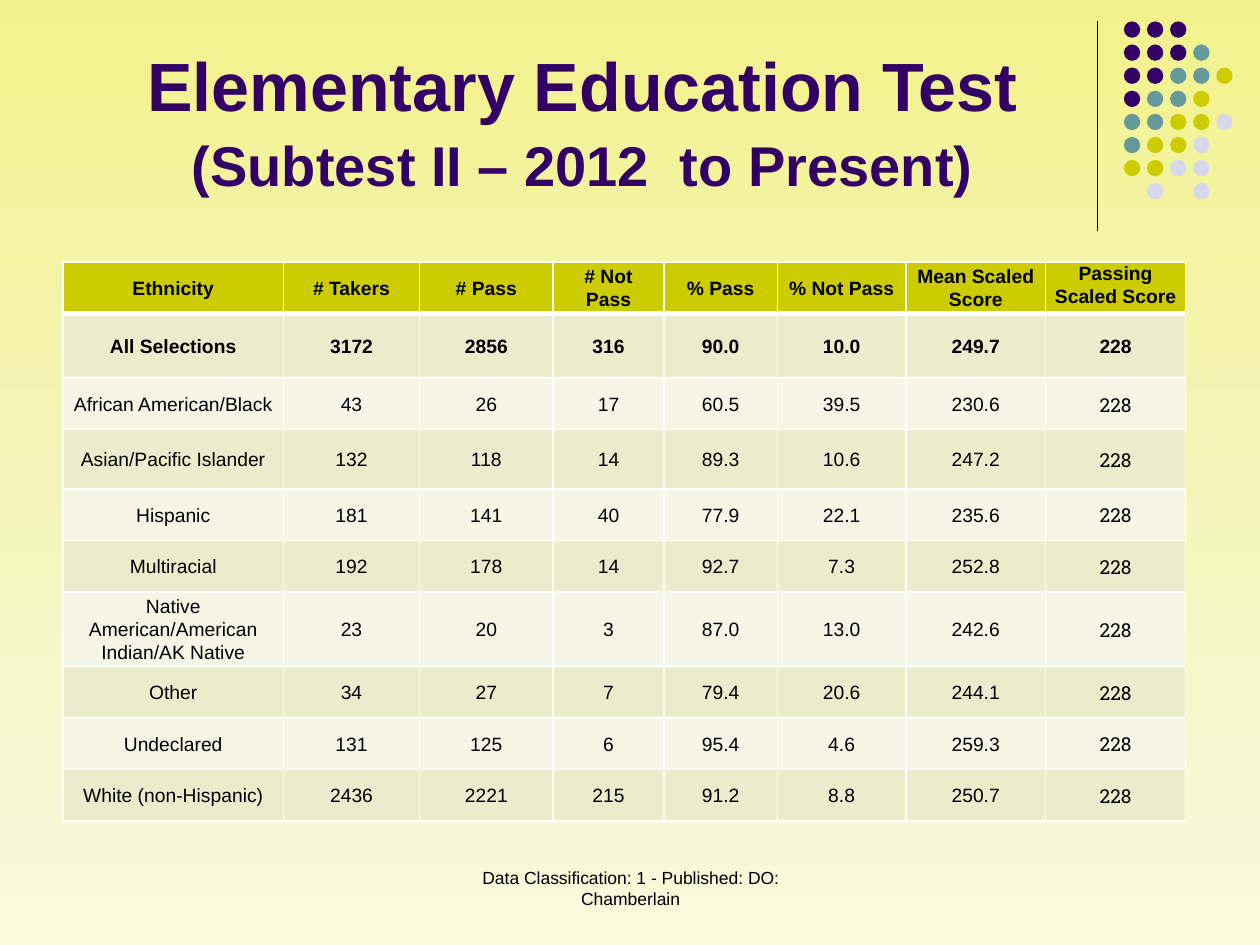
from copy import deepcopy

from pptx import Presentation
from pptx.dml.color import RGBColor
from pptx.enum.shapes import MSO_CONNECTOR as Connector, MSO_SHAPE as Shape
from pptx.enum.text import MSO_ANCHOR as Anchor, PP_ALIGN as Align
from pptx.oxml import parse_xml
from pptx.oxml.ns import nsdecls, qn
from pptx.util import Inches, Pt

BLACK = RGBColor(0x00, 0x00, 0x00)
PURPLE = RGBColor(0x33, 0x00, 0x66)
TEAL = RGBColor(0x66, 0x99, 0x99)
LIME = RGBColor(0xCC, 0xCC, 0x00)
LAVENDER = RGBColor(0xD8, 0xD8, 0xEC)
BAND_DARK = RGBColor(0xEC, 0xEC, 0xCC)
BAND_LIGHT = RGBColor(0xF6, 0xF6, 0xE7)
BORDER = RGBColor(0xFF, 0xFF, 0xFF)
SKY_TOP = RGBColor(0xF2, 0xF2, 0x8C)
SKY_MIDDLE = RGBColor(0xF5, 0xF5, 0xBA)
SKY_BOTTOM = RGBColor(0xF9, 0xF9, 0xDE)

BODY_FONT = "Arial"
SCORE_FONT = "Roboto Slab"

DOT_COLORS = {"P": PURPLE, "T": TEAL, "L": LIME, "V": LAVENDER}
DOT_ROWS = ["PPP", "PPPT", "PPTTL", "PTTL", "TTLLV", "TLLV", "LLVV", " V V"]

COLUMN_WIDTHS = [1.75, 1.08, 1.06, 0.88, 0.9, 1.02, 1.11, 1.11]
ROW_HEIGHTS = [0.41, 0.51, 0.41, 0.47, 0.41, 0.41, 0.54, 0.41, 0.41, 0.41]
HEADINGS = ["Ethnicity", "# Takers", "# Pass", "# Not Pass", "% Pass",
            "% Not Pass", "Mean Scaled Score", "Passing Scaled Score"]
PASSING_SCORE = "228"
RESULTS = [
    ["All Selections", "3172", "2856", "316", "90.0", "10.0", "249.7"],
    ["African American/Black", "43", "26", "17", "60.5", "39.5", "230.6"],
    ["Asian/Pacific Islander", "132", "118", "14", "89.3", "10.6", "247.2"],
    ["Hispanic", "181", "141", "40", "77.9", "22.1", "235.6"],
    ["Multiracial", "192", "178", "14", "92.7", "7.3", "252.8"],
    ["Native American/American Indian/AK Native",
     "23", "20", "3", "87.0", "13.0", "242.6"],
    ["Other", "34", "27", "7", "79.4", "20.6", "244.1"],
    ["Undeclared", "131", "125", "6", "95.4", "4.6", "259.3"],
    ["White (non-Hispanic)", "2436", "2221", "215", "91.2", "8.8", "250.7"],
]


def add_run(paragraph, text, size, color=BLACK, bold=False, font=BODY_FONT):
    run = paragraph.add_run()
    run.text = text
    run.font.name = font
    run.font.size = Pt(size)
    run.font.bold = bold
    run.font.color.rgb = color


def paint_background(slide):
    fill = slide.background.fill
    fill.gradient()
    fill.gradient_angle = 270
    # Third stop halfway down
    stop_list = next(slide.element.iter(qn("a:gsLst")))
    middle = deepcopy(stop_list[0])
    middle.set("pos", "50000")
    stop_list.insert(1, middle)
    for stop, color in zip(fill.gradient_stops, (SKY_TOP, SKY_MIDDLE, SKY_BOTTOM)):
        stop.color.rgb = color


def add_dot_corner(slide, left, top, rule_height):
    # Vertical rule
    rule = slide.shapes.add_connector(
        Connector.STRAIGHT, Inches(left), Inches(top),
        Inches(left), Inches(top + rule_height))
    rule.line.color.rgb = BLACK
    rule.line.width = Pt(0.75)
    rule._element.spPr.append(parse_xml(f"<a:effectLst {nsdecls('a')}/>"))

    # Dot grid
    diameter, pitch, gap = 0.13, 0.1833, 0.21
    dots = slide.shapes.add_group_shape()
    for row, pattern in enumerate(DOT_ROWS):
        for column, key in enumerate(pattern):
            if key == " ":
                continue
            dot = dots.shapes.add_shape(
                Shape.OVAL, Inches(left + gap + column * pitch),
                Inches(top + row * pitch), Inches(diameter), Inches(diameter))
            dot.shadow.inherit = False
            dot.fill.solid()
            dot.fill.fore_color.rgb = DOT_COLORS[key]
            dot.line.fill.background()


def add_centered_box(slide, left, top, width, height, anchor):
    box = slide.shapes.add_textbox(
        Inches(left), Inches(top), Inches(width), Inches(height))
    frame = box.text_frame
    frame.word_wrap = True
    frame.vertical_anchor = anchor
    paragraph = frame.paragraphs[0]
    paragraph.alignment = Align.CENTER
    return paragraph


def add_title(slide, left, top, width, height):
    title = add_centered_box(slide, left, top, width, height, Anchor.BOTTOM)
    title.line_spacing = 1.08
    add_run(title, "Elementary Education Test", 39, PURPLE, bold=True)
    title.add_line_break()
    add_run(title, "(Subtest II – 2012  to Present)", 32, PURPLE, bold=True)


def add_footer(slide, left, top, width, height):
    footer = add_centered_box(slide, left, top, width, height, Anchor.TOP)
    add_run(footer, "Data Classification: 1 - Published: DO: Chamberlain", 10)


def set_borders(cell, top=1, bottom=1):
    properties = cell._tc.get_or_add_tcPr()
    for side, points in (("L", 1), ("R", 1), ("T", top), ("B", bottom)):
        properties.append(parse_xml(
            f'<a:ln{side} {nsdecls("a")} w="{Pt(points)}"><a:solidFill>'
            f'<a:srgbClr val="{BORDER}"/></a:solidFill></a:ln{side}>'))


def add_results_table(slide, left, top):
    rows = [HEADINGS] + [result + [PASSING_SCORE] for result in RESULTS]
    last_column = len(HEADINGS) - 1
    table = slide.shapes.add_table(
        len(rows), len(HEADINGS), Inches(left), Inches(top),
        Inches(sum(COLUMN_WIDTHS)), Inches(sum(ROW_HEIGHTS))).table
    for column, width in zip(table.columns, COLUMN_WIDTHS):
        column.width = Inches(width)
    for row, height in zip(table.rows, ROW_HEIGHTS):
        row.height = Inches(height)

    for r, values in enumerate(rows):
        band = LIME if r == 0 else BAND_DARK if r % 2 else BAND_LIGHT
        for c, value in enumerate(values):
            cell = table.cell(r, c)
            set_borders(cell, top=3 if r == 1 else 1, bottom=3 if r == 0 else 1)
            cell.fill.solid()
            cell.fill.fore_color.rgb = band
            cell.margin_left = cell.margin_right = Inches(0.07)
            cell.margin_top = cell.margin_bottom = 0
            top_heading = r == 0 and c == last_column
            cell.vertical_anchor = Anchor.TOP if top_heading else Anchor.MIDDLE
            paragraph = cell.text_frame.paragraphs[0]
            paragraph.alignment = Align.CENTER
            paragraph.line_spacing = 1.07
            font = SCORE_FONT if r > 1 and c == last_column else BODY_FONT
            add_run(paragraph, value, 11, bold=r < 2, font=font)


def main():
    presentation = Presentation()
    presentation.slide_width = Inches(10)
    presentation.slide_height = Inches(7.5)
    slide = presentation.slides.add_slide(presentation.slide_layouts[6])
    paint_background(slide)
    add_dot_corner(slide, 8.71, 0.17, 1.66)
    add_title(slide, 0.5, 0.42, 8.25, 1.2)
    add_footer(slide, 3.42, 6.83, 3.17, 0.5)
    add_results_table(slide, 0.5, 2.08)
    presentation.save("out.pptx")


if __name__ == "__main__":
    main()
